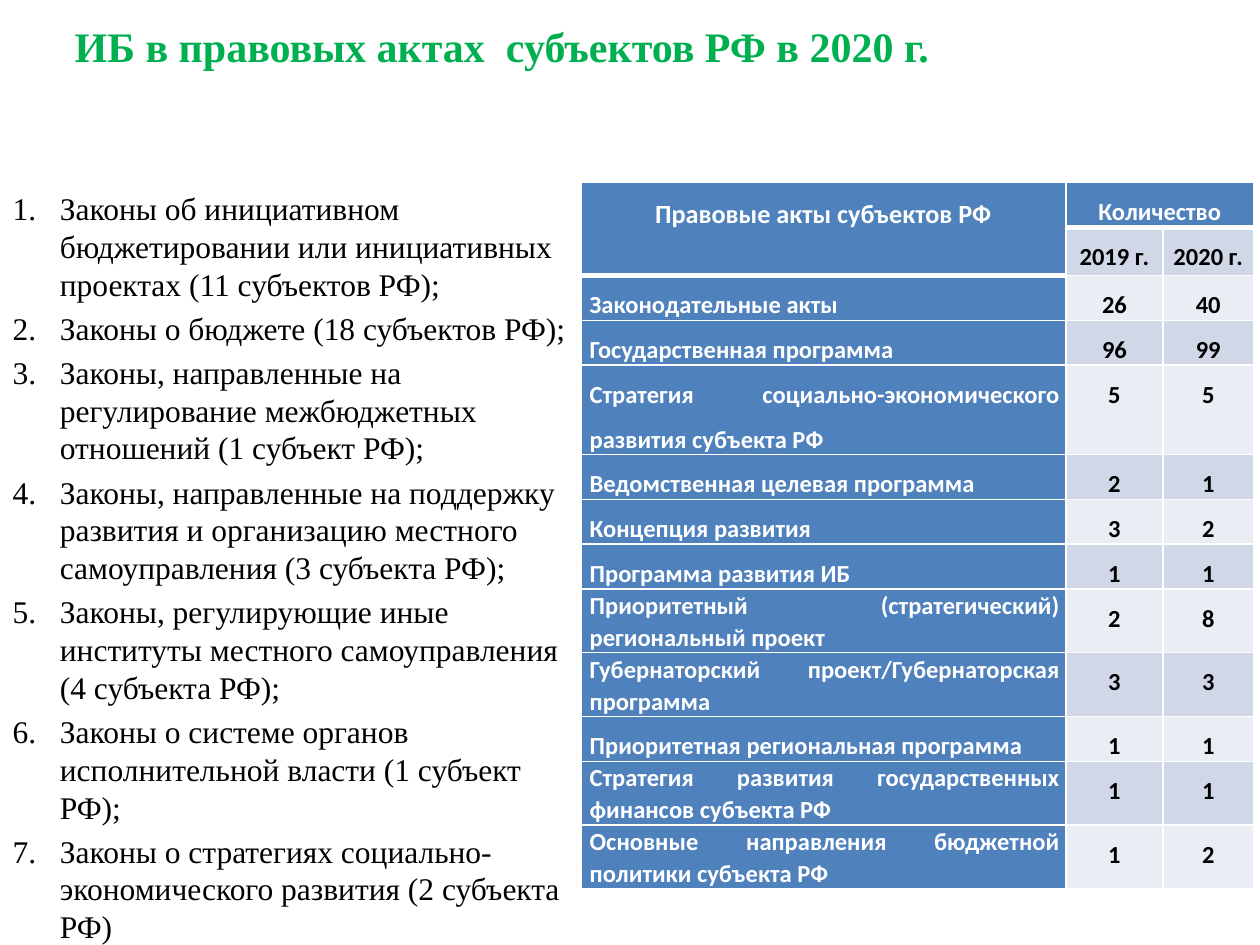
from lxml import etree
from pptx import Presentation, util as u
from pptx.dml.color import RGBColor
from pptx.enum import text as t
from pptx.oxml.ns import qn

HEAD = "ИБ в правовых актах  субъектов РФ в 2020 г. \v"
LAWS = [
    "Законы об инициативном бюджетировании или инициативных проектах (11 субъектов РФ);",
    "Законы о бюджете (18 субъектов РФ);",
    "Законы, направленные на регулирование межбюджетных отношений (1 субъект РФ);",
    "Законы, направленные на поддержку развития и организацию местного самоуправления (3 субъекта РФ);",
    "Законы, регулирующие иные институты местного самоуправления (4 субъекта РФ);",
    "Законы о системе органов исполнительной власти (1 субъект РФ);",
    "Законы о стратегиях социально-экономического развития (2 субъекта РФ)",
]
TOP = [("Правовые акты субъектов РФ", "Количество", ""), ("", "2019 г.", "2020 г.")]
ONE, TWO, TALL = (21.6, 1.5), (33.84, 1.07), (46.08, 1.5)
ACTS = [
    ("Законодательные акты", 26, 40, ONE),
    ("Государственная программа", 96, 99, ONE),
    ("Стратегия социально-экономического развития субъекта РФ", 5, 5, TALL),
    ("Ведомственная целевая программа", 2, 1, ONE),
    ("Концепция развития", 3, 2, ONE),
    ("Программа развития ИБ", 1, 1, ONE),
    ("Приоритетный (стратегический) региональный проект", 2, 8, TWO),
    ("Губернаторский проект/Губернаторская программа", 3, 3, TWO),
    ("Приоритетная региональная программа", 1, 1, ONE),
    ("Стратегия развития государственных финансов субъекта РФ", 1, 1, TWO),
    ("Основные направления бюджетной политики субъекта РФ", 1, 2, TWO),
]
THEME = {
    "serif": "Times New Roman", "sans": "Calibri",
    "title": 24, "list": 18, "head": 15, "cell": 14,
    "green": "00B050", "blue": "4F81BD", "white": "FFFFFF", "black": "000000",
    "bands": ("D0D8E8", "E9EDF4"),
}
BOX = {
    "title": (13.68, 30.24, 552.24, 42.48),
    "list": (0, 104.4, 331.92, 407.52),
    "table": (331.92, 104.4, 384.48, 396),
}
COLS = (277.2, 55.44, 51.84)
MID, JUST = t.PP_ALIGN.CENTER, t.PP_ALIGN.JUSTIFY


def put(obj, **vals):
    for key, val in vals.items():
        setattr(obj, key, val)


def ink(obj, face, size, color, bold):
    put(obj.font, name=THEME[face], size=u.Pt(THEME[size]), bold=bold)
    obj.font.color.rgb = RGBColor.from_string(THEME[color])


def place(shape, name):
    keys = ("left", "top", "width", "height")
    put(shape, **{k: u.Pt(v) for k, v in zip(keys, BOX[name])})


def edge(cell, base):
    props = cell._tc.get_or_add_tcPr()
    for spot, (tag, wide) in enumerate((("lnL", 1), ("lnR", 1), ("lnT", 1), ("lnB", base))):
        line = etree.Element(qn("a:" + tag), w=str(u.Pt(wide)))
        fill = etree.SubElement(line, qn("a:solidFill"))
        etree.SubElement(fill, qn("a:srgbClr"), val=THEME["white"])
        props.insert(spot, line)


def write(cell, words, fill, color, align, space, size="cell", base=1):
    put(cell, margin_left=u.Pt(3.6), margin_right=u.Pt(3.6), margin_top=0, margin_bottom=0)
    cell.fill.solid()
    cell.fill.fore_color.rgb = RGBColor.from_string(fill)
    edge(cell, base)
    par = cell.text_frame.paragraphs[0]
    put(par, alignment=align, line_spacing=space, space_after=u.Pt(8))
    if align == JUST:
        par._p.get_or_add_pPr().set("marL", str(u.Pt(1.44)))
    if words:
        run = par.add_run()
        run.text = words
        ink(run, "sans", size, color, True)


def fill_list(frame):
    put(frame, auto_size=t.MSO_AUTO_SIZE.NONE, word_wrap=True)
    frame.text = "\n".join(LAWS)
    for par in frame.paragraphs:
        props = par._p.get_or_add_pPr()
        put_in = {"marL": u.Pt(27), "indent": -u.Pt(27)}
        for key, val in put_in.items():
            props.set(key, str(int(val)))
        etree.SubElement(props, qn("a:buFont"), typeface="+mj-lt")
        etree.SubElement(props, qn("a:buAutoNum"), type="arabicPeriod")
        ink(par.runs[0], "serif", "list", "black", False)


def fill_table(grid):
    for col, wide in zip(grid.columns, COLS):
        col.width = u.Pt(wide)
    for row, size in zip(grid.rows, [21.6] * 2 + [act[3][0] for act in ACTS]):
        row.height = u.Pt(size)
    for r, row in enumerate(TOP):
        for c, words in enumerate(row):
            dark = r == 0 or c == 0
            write(grid.cell(r, c), words, THEME["blue"] if dark else THEME["bands"][0],
                  "white" if dark else "black", MID, 1.5,
                  "cell" if c else "head", 3 if dark else 1)
    grid.cell(0, 0).merge(grid.cell(1, 0))
    grid.cell(0, 1).merge(grid.cell(0, 2))
    for r, (name, old, new, (_, space)) in enumerate(ACTS, len(TOP)):
        write(grid.cell(r, 0), name, THEME["blue"], "white", JUST, space)
        band = THEME["bands"][(r + 1) % 2]
        for c, count in enumerate((old, new), 1):
            write(grid.cell(r, c), str(count), band, "black", MID, 1.5)


def main():
    deck = Presentation()
    put(deck, slide_width=u.Pt(720), slide_height=u.Pt(540))
    slide = deck.slides.add_slide(deck.slide_layouts[1])
    title, body = slide.placeholders
    place(title, "title")
    frame = title.text_frame
    put(frame, auto_size=t.MSO_AUTO_SIZE.NONE, vertical_anchor=t.MSO_ANCHOR.BOTTOM, word_wrap=True)
    par = frame.paragraphs[0]
    par.text = HEAD
    par.alignment = MID
    ink(par, "serif", "title", "green", True)
    ink(par.runs[0], "serif", "title", "green", True)
    for rest in par._p.findall(qn("a:br")):
        etree.SubElement(rest, qn("a:rPr"), sz=str(THEME["title"] * 100))
    etree.SubElement(par._p, qn("a:endParaRPr"), sz=str(THEME["title"] * 100))
    place(body, "list")
    fill_list(body.text_frame)
    box = [u.Pt(v) for v in BOX["table"]]
    fill_table(slide.shapes.add_table(len(TOP) + len(ACTS), len(COLS), *box).table)
    deck.save("out.pptx")


if __name__ == "__main__":
    main()
